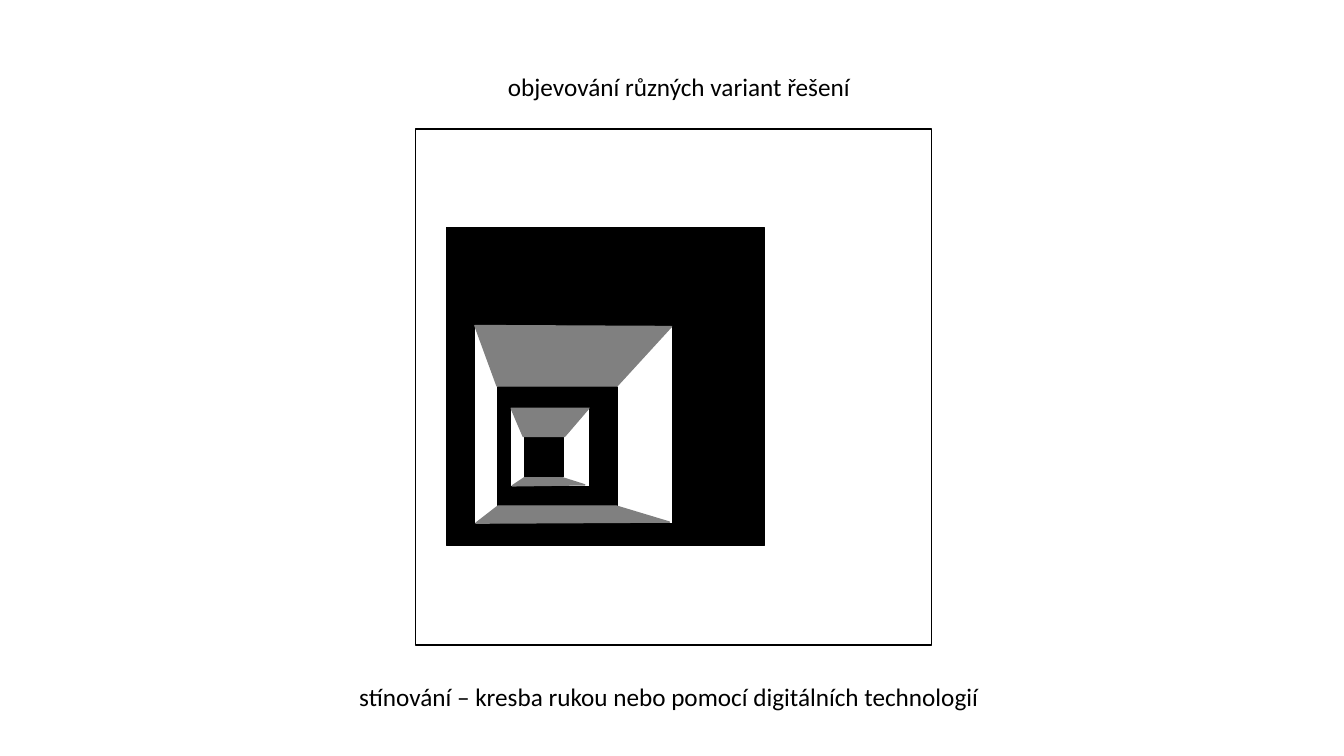
import pptx
import pptx.dml.color
import pptx.enum.shapes
import pptx.enum.text
import pptx.util

BLACK, WHITE, GREY = "000000", "FFFFFF", "808080"


def color(hex_value):
    return pptx.dml.color.RGBColor.from_string(hex_value)


def paint(shape, fill, line):
    shape.shadow.inherit = False
    if fill:
        shape.fill.solid()
        shape.fill.fore_color.rgb = color(fill)
    else:
        shape.fill.background()
    shape.line.color.rgb = color(line)
    shape.line.width = pptx.util.Pt(1)


deck = pptx.Presentation()
deck.slide_width = pptx.util.Inches(13.33)
deck.slide_height = pptx.util.Inches(7.5)
slide = deck.slides.add_slide(deck.slide_layouts[6])
cell = deck.slide_height / 75

squares = [
    (44.3, 22.6, 31.5, BLACK),
    (47, 32.3, 19.7, WHITE),
    (49.4, 38.4, 11.8, BLACK),
    (41.2, 12.8, 51.2, None),
    (50.6, 40.4, 7.9, WHITE),
    (52, 43.4, 3.9, BLACK),
]
shaded_walls = [
    [(47.1, 32.3), (66.6, 32.4), (61.2, 38.3), (49.3, 38.3)],
    [(50.7, 40.5), (58.4, 40.5), (56, 43.3), (51.9, 43.3)],
    [(47.2, 51.9), (49.4, 50.2), (61.1, 50.2), (66.4, 51.8)],
    [(50.8, 48.2), (58, 48.1), (55.8, 47.4), (52, 47.4)],
]
captions = [
    ("objevování různých variant řešení", 49.4, 6.6, 36.3, False,
     pptx.enum.text.PP_ALIGN.LEFT),
    ("stínování – kresba rukou nebo pomocí digitálních technologií", 20.2, 67.1, 92.3, True,
     pptx.enum.text.PP_ALIGN.CENTER),
]

tunnel = slide.shapes.add_group_shape()
for column, row, side, fill in squares:
    square = tunnel.shapes.add_shape(
        pptx.enum.shapes.MSO_SHAPE.RECTANGLE,
        round(column * cell), round(row * cell), round(side * cell), round(side * cell))
    paint(square, fill, BLACK)

for corners in shaded_walls:
    points = [(round(column * cell), round(row * cell)) for column, row in corners]
    outline = tunnel.shapes.build_freeform(*points[0])
    outline.add_line_segments(points[1:], close=True)
    paint(outline.convert_to_shape(), GREY, GREY)

for wording, column, row, width, wraps, alignment in captions:
    caption = slide.shapes.add_textbox(
        round(column * cell), round(row * cell), round(width * cell), round(4 * cell))
    caption.text_frame.word_wrap = wraps
    caption.text_frame.auto_size = pptx.enum.text.MSO_AUTO_SIZE.SHAPE_TO_FIT_TEXT
    line = caption.text_frame.paragraphs[0]
    line.text = wording
    line.alignment = alignment
    line.font.name = "Calibri"
    line.font.size = pptx.util.Pt(18)
    line.font.color.rgb = color(BLACK)

deck.save("out.pptx")
